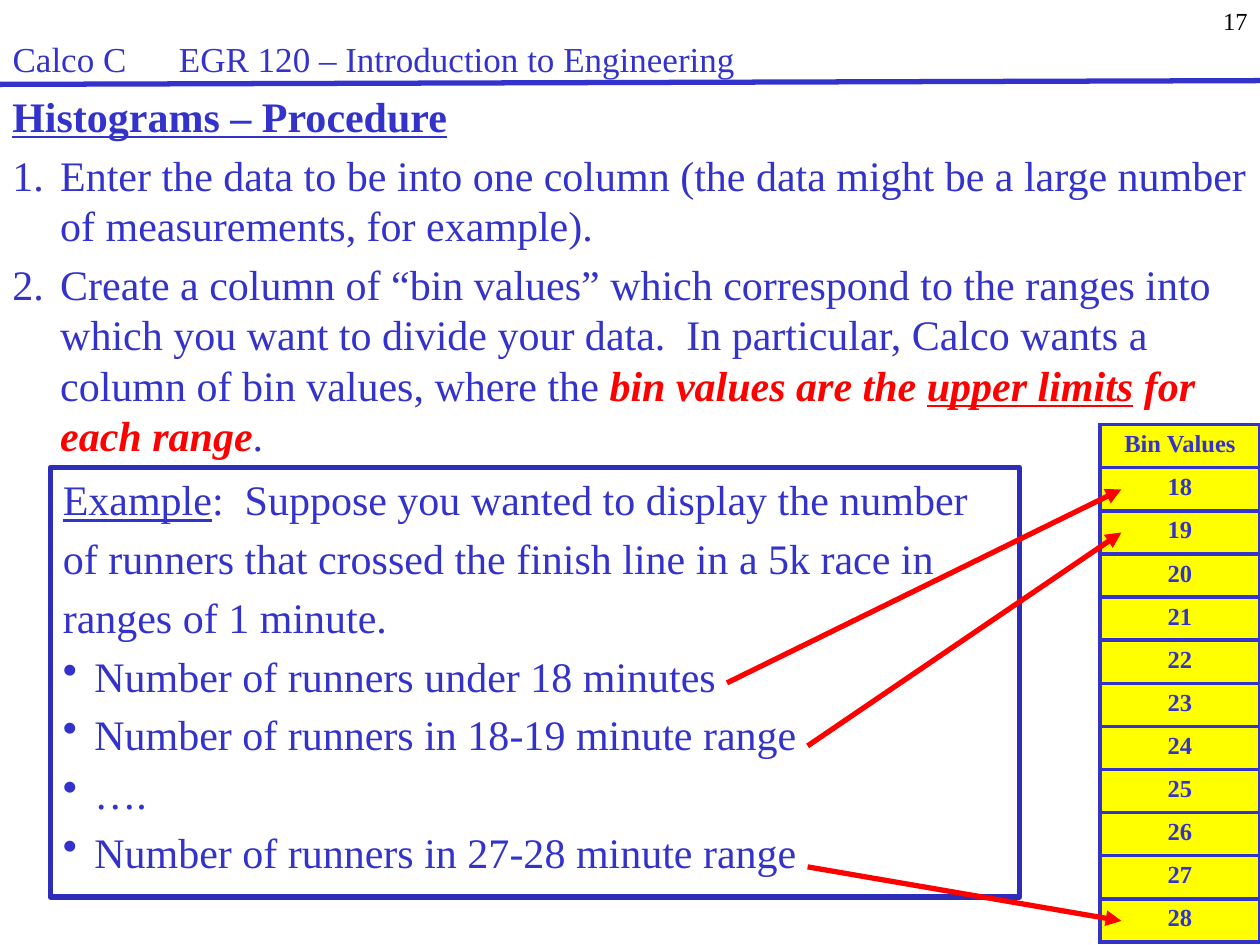
from dataclasses import dataclass
from typing import Optional

from pptx import Presentation, util as u
from pptx.dml.color import RGBColor
from pptx.enum import shapes, text
from pptx.oxml.ns import qn
from lxml import etree

COLORS = {"blue": "3333CC", "frame": "2D2DB9", "red": "FF0000",
          "yellow": "FFFF00", "black": "000000"}
FONT = "Times New Roman"
WIDTH, HEIGHT = 10, 7.5
BINS = ["Bin Values"] + [str(n) for n in range(18, 29)]
TABLE_X, TABLE_Y, TABLE_W, ROW_H = 8.73, 3.37, 1.27, 0.3425


@dataclass
class Run:
    text: str
    bold: bool = False
    italic: bool = False
    underline: bool = False
    color: str = "blue"


@dataclass
class Para:
    runs: list[Run]
    bullet: Optional[str] = None


@dataclass
class Arrow:
    x: float
    y: float
    row: int


BODY = [
    Para([Run("Histograms – Procedure", bold=True, underline=True)]),
    Para([Run("Enter the data to be into one column (the data might be a large "
              "number of measurements, for example).")], "1."),
    Para([Run("Create a column of “bin values” which correspond to the ranges into "
              "which you want to divide your data.  In particular, Calco wants a "
              "column of bin values, where the "),
          Run("bin values are the ", True, True, color="red"),
          Run("upper limits", True, True, True, "red"),
          Run(" for each range", True, True, color="red"),
          Run(".")], "1."),
]
EXAMPLE = [
    Para([Run("Example", underline=True),
          Run(":  Suppose you wanted to display the number")]),
    Para([Run("of runners that crossed the finish line in a 5k race in")]),
    Para([Run("ranges of 1 minute.")]),
] + [Para([Run(t)], "•") for t in (
    "Number of runners under 18 minutes", "Number of runners in 18-19 minute range",
    "….", "Number of runners in 27-28 minute range")]
ARROWS = [Arrow(5.77, 5.42, 1), Arrow(6.41, 5.92, 2), Arrow(6.41, 6.88, 11)]


def rgb(name: str) -> RGBColor:
    return RGBColor.from_string(COLORS[name])


def set_bullet(pPr, bullet: Optional[str]) -> None:
    if bullet is None:
        etree.SubElement(pPr, qn("a:buNone"))
    elif bullet == "1.":
        etree.SubElement(pPr, qn("a:buAutoNum"), type="arabicPeriod")
    else:
        etree.SubElement(pPr, qn("a:buChar"), char=bullet)


def write(tf, paras: list[Para], size: float, indent: float = 0,
          align=text.PP_ALIGN.LEFT, line_spacing: float = 1.0) -> None:
    """Fill a text frame; each paragraph has a hanging indent in inches."""
    tf.word_wrap = True
    tf.auto_size = text.MSO_AUTO_SIZE.NONE
    tf.vertical_anchor = text.MSO_ANCHOR.TOP
    for i, para in enumerate(paras):
        p = tf.paragraphs[0] if i == 0 else tf.add_paragraph()
        p.alignment = align
        p.line_spacing = line_spacing
        p.space_before = u.Pt(size * 0.2)
        pPr = p._p.get_or_add_pPr()
        pPr.set("marL", str(u.Inches(indent)))
        pPr.set("indent", str(-u.Inches(indent)))
        set_bullet(pPr, para.bullet)
        for run in para.runs:
            r = p.add_run()
            r.text = run.text
            f = r.font
            f.name, f.size, f.color.rgb = FONT, u.Pt(size), rgb(run.color)
            f.bold, f.italic, f.underline = run.bold, run.italic, run.underline


def place(sp, x: float, y: float, w: float, h: float) -> None:
    sp.left, sp.top, sp.width, sp.height = map(u.Inches, (x, y, w, h))


def add_text(s, x: float, y: float, w: float, h: float):
    return s.shapes.add_textbox(*map(u.Inches, (x, y, w, h))).text_frame


def add_line(s, x1: float, y1: float, x2: float, y2: float,
             color: str, arrow: bool = False) -> None:
    sp = s.shapes.add_connector(shapes.MSO_CONNECTOR.STRAIGHT,
                                *map(u.Inches, (x1, y1, x2, y2)))
    sp.line.color.rgb, sp.line.width = rgb(color), u.Pt(3)
    if arrow:
        etree.SubElement(sp.line._get_or_add_ln(), qn("a:tailEnd"), type="triangle")
    etree.SubElement(sp._element.spPr, qn("a:effectLst"))


def set_borders(cell) -> None:
    tcPr = cell._tc.get_or_add_tcPr()
    for i, side in enumerate(("lnL", "lnR", "lnT", "lnB")):
        ln = etree.Element(qn(f"a:{side}"), w=str(u.Pt(2.25)))
        fill = etree.SubElement(ln, qn("a:solidFill"))
        etree.SubElement(fill, qn("a:srgbClr"), val=COLORS["blue"])
        tcPr.insert(i, ln)


def add_bins(s) -> None:
    sp = s.shapes.add_table(len(BINS), 1, *map(u.Inches, (
        TABLE_X, TABLE_Y, TABLE_W, ROW_H * len(BINS))))
    for row, label in zip(sp.table.rows, BINS):
        row.height = u.Inches(ROW_H)
        cell = row.cells[0]
        cell.fill.solid()
        cell.fill.fore_color.rgb = rgb("yellow")
        set_borders(cell)
        write(cell.text_frame, [Para([Run(label, bold=True)])], 14,
              align=text.PP_ALIGN.CENTER)


def add_example(s) -> None:
    sp = s.shapes.add_shape(shapes.MSO_SHAPE.RECTANGLE,
                            *map(u.Inches, (0.4, 3.71, 7.69, 3.41)))
    sp.shadow.inherit = False
    sp.fill.background()
    sp.line.color.rgb, sp.line.width = rgb("frame"), u.Pt(3)
    write(sp.text_frame, EXAMPLE, 24, 0.25)


def main() -> None:
    prs = Presentation()
    prs.slide_width, prs.slide_height = u.Inches(WIDTH), u.Inches(HEIGHT)
    s = prs.slides.add_slide(prs.slide_layouts[5])
    place(s.shapes.title, 0, 0.25, 8.58, 0.33)
    write(s.shapes.title.text_frame,
          [Para([Run("Calco C      EGR 120 – Introduction to Engineering")])], 20)
    write(add_text(s, 7.92, 0, 2.08, 0.5), [Para([Run("17", color="black")])], 14,
          align=text.PP_ALIGN.RIGHT)
    write(add_text(s, 0, 0.67, WIDTH, 2.1), BODY, 24, 0.38)
    add_bins(s)
    add_example(s)
    add_line(s, 0, 0.67, WIDTH, 0.64, "blue")
    for a in ARROWS:
        add_line(s, a.x, a.y, 8.9, TABLE_Y + (a.row + 0.5) * ROW_H, "red", True)
    prs.save("out.pptx")


if __name__ == "__main__":
    main()
